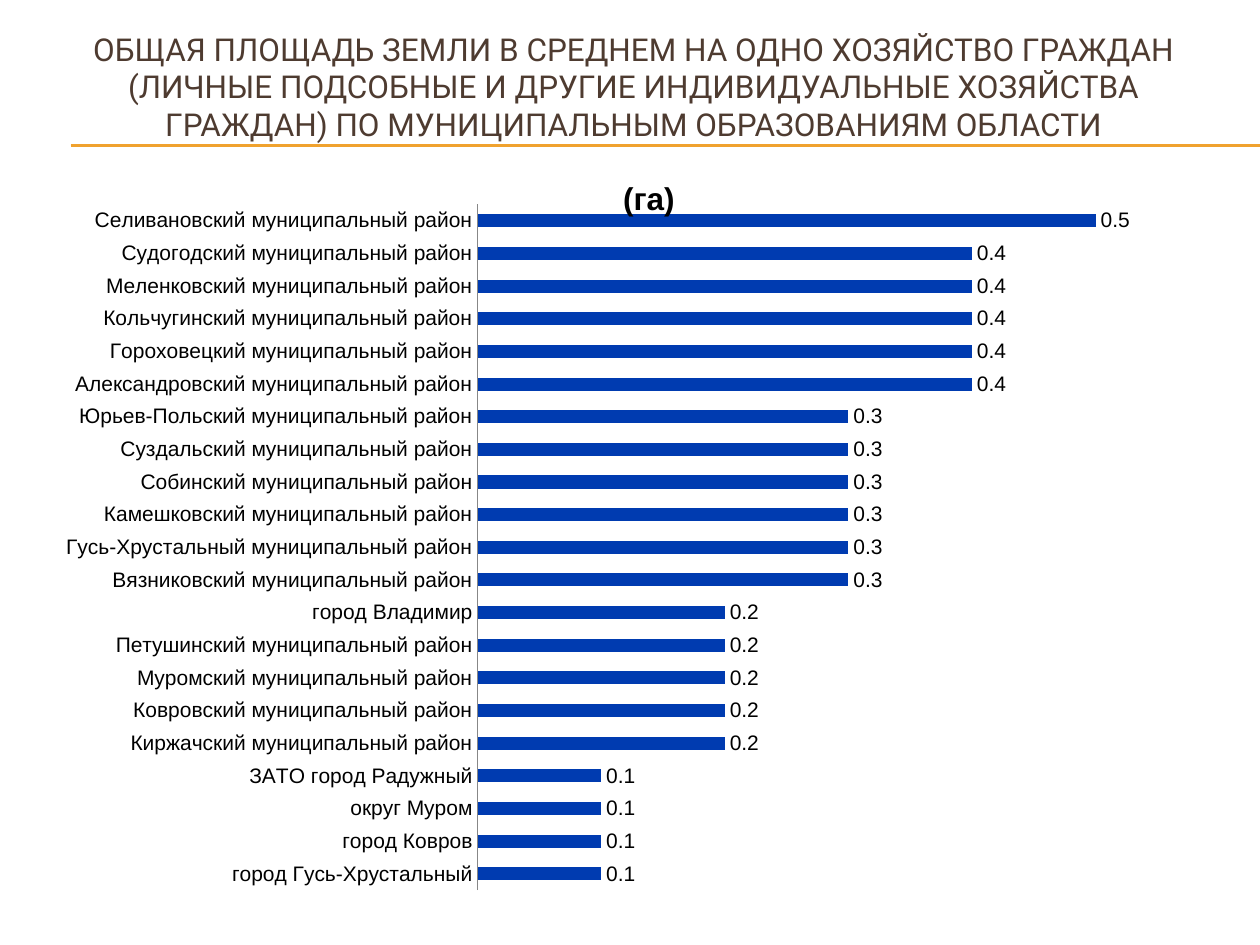
import pptx
import pptx.util
import pptx.chart.data
import pptx.dml.color
import pptx.enum.chart
import pptx.enum.shapes
import pptx.enum.text
import pptx.oxml
import pptx.oxml.ns
from dataclasses import dataclass

Inches = pptx.util.Inches
Pt = pptx.util.Pt
RGB = pptx.dml.color.RGBColor.from_string


@dataclass(frozen=True)
class Theme:
    ink: str = "000000"
    head: str = "4E3B30"
    rule: str = "F0A22E"
    bar: str = "003BB0"
    axis: str = "878787"
    face: str = "Roboto"
    plain: str = "Arial"
    big: int = 18
    small: int = 12
    base: int = 10


theme = Theme()


def write(frame, text, font=theme.plain, size=theme.big, color=theme.ink, bold=False):
    par = frame.paragraphs[0]
    par.alignment = pptx.enum.text.PP_ALIGN.CENTER
    run = par.add_run()
    run.text = text
    run.font.name = font
    run.font.size = Pt(size)
    run.font.bold = bold
    run.font.color.rgb = RGB(color)


def place(owner, **parts):
    old = owner.find(pptx.oxml.ns.qn("c:layout"))
    if old is not None:
        owner.remove(old)
    tags = "".join(f'<c:{tag} val="{val}"/>' for tag, val in parts.items())
    return pptx.oxml.parse_xml(
        f'<c:layout {pptx.oxml.ns.nsdecls("c")}><c:manualLayout>{tags}</c:manualLayout></c:layout>'
    )


deck = pptx.Presentation()
deck.slide_width = Inches(10)
deck.slide_height = Inches(7.5)
slide = deck.slides.add_slide(deck.slide_layouts[5])

for y in (1.15, 1.16):
    line = slide.shapes.add_connector(
        pptx.enum.shapes.MSO_CONNECTOR.STRAIGHT, Inches(0.56), Inches(y), Inches(10), Inches(y)
    )
    line.line.color.rgb = RGB(theme.rule)
    line.line.width = Pt(0.75)
    line.element.spPr.append(
        pptx.oxml.parse_xml(f'<a:effectLst {pptx.oxml.ns.nsdecls("a")}/>')
    )

title = slide.shapes.title
title.left, title.top = Inches(0.28), Inches(0.29)
title.width, title.height = Inches(9.5), Inches(0.79)
frame = title.text_frame
frame.word_wrap = True
frame.auto_size = pptx.enum.text.MSO_AUTO_SIZE.NONE
frame.vertical_anchor = pptx.enum.text.MSO_ANCHOR.MIDDLE
write(
    frame,
    "ОБЩАЯ ПЛОЩАДЬ ЗЕМЛИ В СРЕДНЕМ НА ОДНО ХОЗЯЙСТВО ГРАЖДАН "
    "(ЛИЧНЫЕ ПОДСОБНЫЕ И ДРУГИЕ ИНДИВИДУАЛЬНЫЕ ХОЗЯЙСТВА ГРАЖДАН) "
    "ПО МУНИЦИПАЛЬНЫМ ОБРАЗОВАНИЯМ ОБЛАСТИ",
    font=theme.face,
    color=theme.head,
)

rural = " муниципальный район"
areas = {
    0.1: ["город Гусь-Хрустальный", "город Ковров", "округ Муром", "ЗАТО город Радужный"],
    0.2: [name + rural for name in ("Киржачский", "Ковровский", "Муромский", "Петушинский")]
    + ["город Владимир"],
    0.3: [
        name + rural
        for name in (
            "Вязниковский", "Гусь-Хрустальный", "Камешковский",
            "Собинский", "Суздальский", "Юрьев-Польский",
        )
    ],
    0.4: [
        name + rural
        for name in (
            "Александровский", "Гороховецкий", "Кольчугинский", "Меленковский", "Судогодский",
        )
    ],
    0.5: ["Селивановский" + rural],
}
data = pptx.chart.data.CategoryChartData(number_format="0.0")
data.categories = [name for names in areas.values() for name in names]
data.add_series("Series 1", [area for area, names in areas.items() for name in names])

chart = slide.shapes.add_chart(
    pptx.enum.chart.XL_CHART_TYPE.BAR_CLUSTERED,
    Inches(0.35), Inches(1.31), Inches(9.48), Inches(5.91), data,
).chart
chart.has_legend = False
chart.font.name = theme.face
chart.font.size = Pt(theme.base)
chart.font.color.rgb = RGB(theme.ink)

chart.has_title = True
write(chart.chart_title.text_frame, "(га)", bold=True)
chart.chart_title.include_in_layout = False
head = chart.chart_title._element
spot = place(head, xMode="edge", yMode="edge", x=0.48, y=0.01)
head.find(pptx.oxml.ns.qn("c:tx")).addnext(spot)
area = chart._chartSpace.chart.plotArea
area.insert(0, place(
    area, layoutTarget="inner", xMode="edge", yMode="edge", x=0.363, y=0.053, w=0.621, h=0.921,
))

none = pptx.enum.chart.XL_TICK_MARK.NONE
cats = chart.category_axis
cats.major_tick_mark = none
cats.minor_tick_mark = none
cats.has_major_gridlines = False
cats.format.line.color.rgb = RGB(theme.axis)
cats.format.line.width = Pt(0.75)
vals = chart.value_axis
vals.minimum_scale = 0
vals.maximum_scale = 0.6
vals.has_major_gridlines = False
vals.visible = False

plot = chart.plots[0]
plot.gap_width = 150
plot.overlap = -25
plot.vary_by_categories = False
bars = plot.series[0]
bars.invert_if_negative = False
bars.format.fill.solid()
bars.format.fill.fore_color.rgb = RGB(theme.bar)
tags = bars.data_labels
tags.show_value = True
tags.number_format = "0.0"
tags.number_format_is_linked = False
tags.position = pptx.enum.chart.XL_LABEL_POSITION.OUTSIDE_END
for font in (cats.tick_labels.font, tags.font):
    font.name = theme.plain
    font.size = Pt(theme.small)
    font.color.rgb = RGB(theme.ink)

deck.save("out.pptx")
